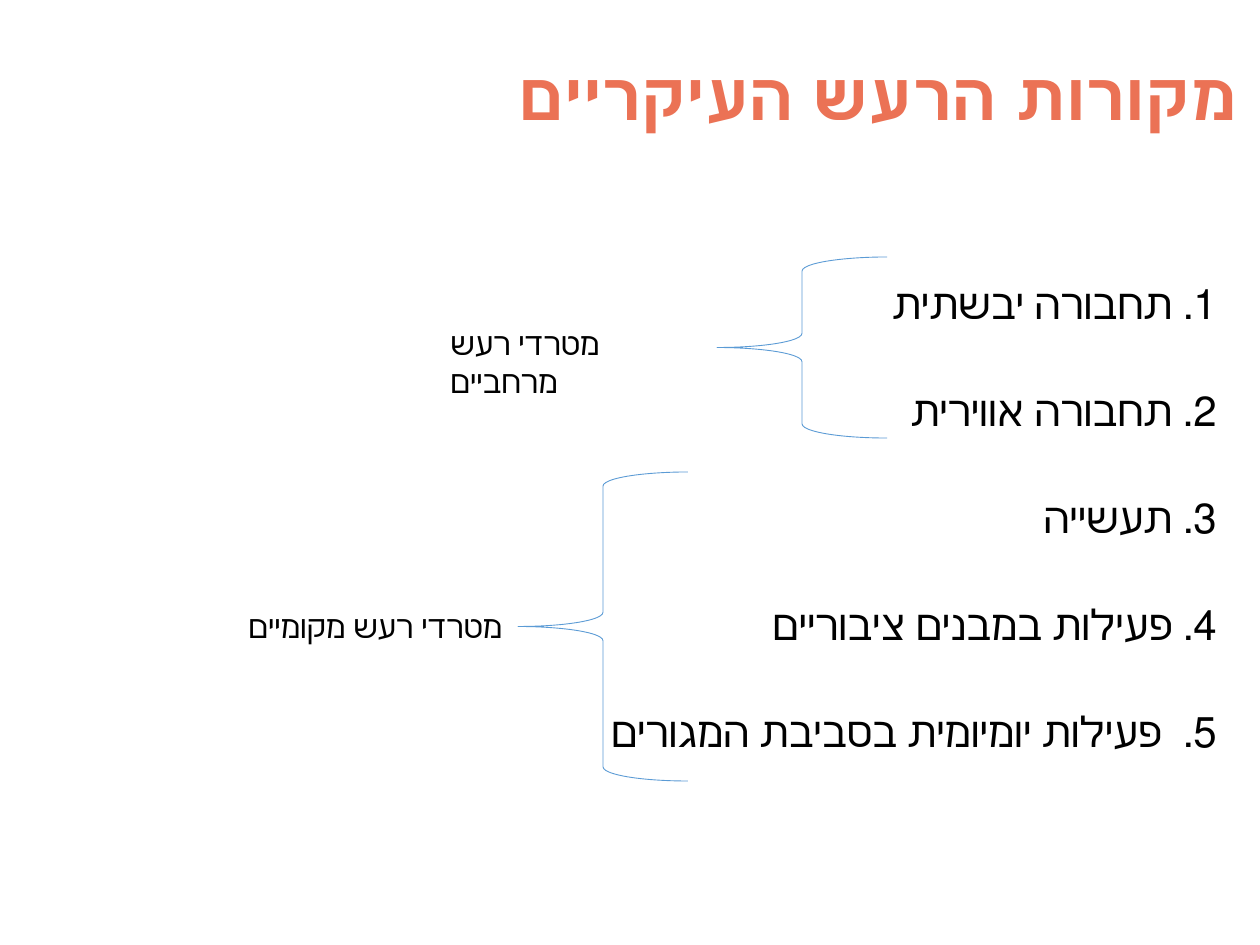
from dataclasses import dataclass

from pptx import Presentation
from pptx.dml.color import RGBColor
from pptx.enum.shapes import MSO_SHAPE
from pptx.enum.text import MSO_ANCHOR, PP_ALIGN
from pptx.slide import Slide
from pptx.util import Emu, Pt

LEFT_BRACE = MSO_SHAPE.LEFT_BRACE
TOP, MIDDLE = MSO_ANCHOR.TOP, MSO_ANCHOR.MIDDLE
LEFT, RIGHT = PP_ALIGN.LEFT, PP_ALIGN.RIGHT

CORAL = RGBColor(0xEB, 0x72, 0x55)
BLACK = RGBColor(0x00, 0x00, 0x00)
BLUE = RGBColor(0x5B, 0x9B, 0xD5)

FONT_NAME = "Calibri"
PX_PER_INCH = 126
SLIDE_WIDTH, SLIDE_HEIGHT = 1260, 945


@dataclass(frozen=True)
class Box:
    left: int
    top: int
    width: int
    height: int


@dataclass(frozen=True)
class TextStyle:
    size: int
    color: RGBColor = BLACK
    bold: bool = False
    align: PP_ALIGN = LEFT
    anchor: MSO_ANCHOR = TOP
    line_spacing: float = 1.0
    space_before: int = 0
    space_after: int = 0
    right_to_left: bool = False


@dataclass(frozen=True)
class NoiseGroup:
    label: str
    label_box: Box
    brace_box: Box


TITLE_STYLE = TextStyle(38, CORAL, True, RIGHT, MIDDLE, 0.9)
LIST_STYLE = TextStyle(24, align=RIGHT, line_spacing=1.5, space_before=10,
                       space_after=8, right_to_left=True)
LABEL_STYLE = TextStyle(18)

TITLE = "מקורות הרעש העיקריים"
TITLE_BOX = Box(227, 77, 1023, 44)
SOURCES = [
    "1. תחבורה יבשתית",
    "2. תחבורה אווירית",
    "3. תעשייה",
    "4. פעילות במבנים ציבוריים",
    "5.  פעילות יומיומית בסביבת המגורים",
]
SOURCES_BOX = Box(494, 246, 735, 571)
GROUPS = [
    NoiseGroup("מטרדי רעש מרחביים", Box(438, 318, 282, 50), Box(717, 257, 170, 181)),
    NoiseGroup("מטרדי רעש מקומיים", Box(236, 601, 282, 50), Box(518, 472, 170, 309)),
]


def px(length: int) -> Emu:
    return Emu(round(length * 914400 / PX_PER_INCH))


def place(box: Box) -> tuple[Emu, Emu, Emu, Emu]:
    return px(box.left), px(box.top), px(box.width), px(box.height)


def add_text(slide: Slide, box: Box, lines: list[str], style: TextStyle) -> None:
    text_frame = slide.shapes.add_textbox(*place(box)).text_frame
    text_frame.word_wrap = True
    text_frame.vertical_anchor = style.anchor
    for index, line in enumerate(lines):
        paragraph = text_frame.add_paragraph() if index else text_frame.paragraphs[0]
        paragraph.alignment = style.align
        paragraph.line_spacing = style.line_spacing
        paragraph.space_before = Pt(style.space_before if index else 0)
        paragraph.space_after = Pt(style.space_after)
        if style.right_to_left:
            paragraph._p.get_or_add_pPr().set("rtl", "1")
        run = paragraph.add_run()
        run.text = line
        run.font.name = FONT_NAME
        run.font.size = Pt(style.size)
        run.font.bold = style.bold
        run.font.color.rgb = style.color


def add_brace(slide: Slide, box: Box) -> None:
    shape = slide.shapes.add_shape(LEFT_BRACE, *place(box))
    shape.shadow.inherit = False
    shape.fill.background()
    shape.line.color.rgb = BLUE
    shape.line.width = Pt(0.5)


def main() -> None:
    presentation = Presentation()
    presentation.slide_width = px(SLIDE_WIDTH)
    presentation.slide_height = px(SLIDE_HEIGHT)
    slide = presentation.slides.add_slide(presentation.slide_layouts[6])
    add_text(slide, TITLE_BOX, [TITLE], TITLE_STYLE)
    add_text(slide, SOURCES_BOX, SOURCES, LIST_STYLE)
    for group in GROUPS:
        add_brace(slide, group.brace_box)
        add_text(slide, group.label_box, [group.label], LABEL_STYLE)
    presentation.save("out.pptx")


if __name__ == "__main__":
    main()
